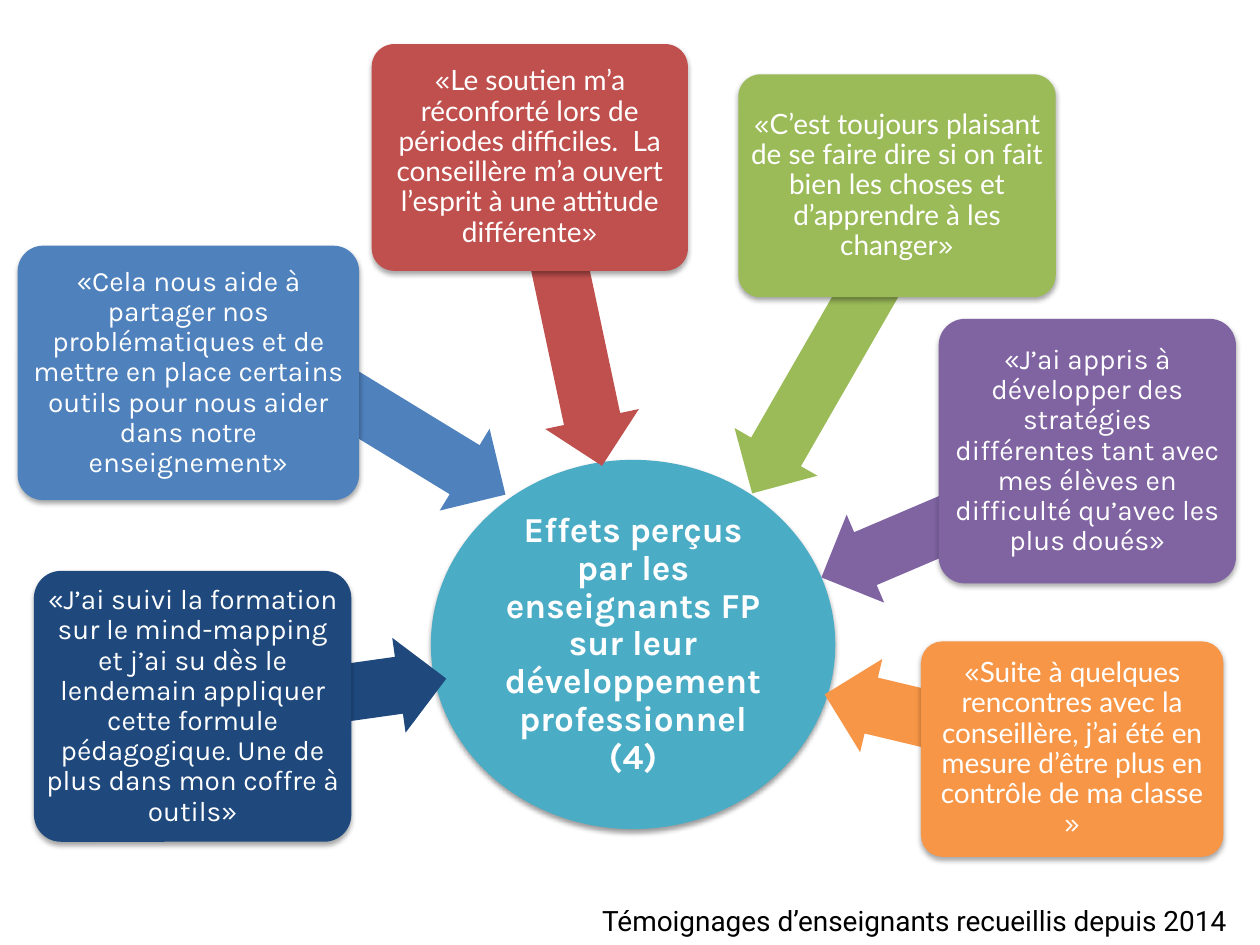
from lxml import etree
from pptx import Presentation
from pptx.dml.color import RGBColor
from pptx.enum.shapes import MSO_SHAPE as Shape
from pptx.enum.text import MSO_ANCHOR as Anchor, PP_ALIGN as Align
from pptx.oxml.ns import qn
from pptx.util import Pt

COLORS = {
    "navy": "1F497D", "blue": "4F81BD", "red": "C0504D", "green": "9BBB59",
    "purple": "8064A2", "orange": "F79646", "teal": "4BACC6",
    "white": "FFFFFF", "black": "000000",
}

ARROW_HEIGHT = 54.7

TESTIMONIES = [
    ("navy", (19.4, 326.2, 181.4, 154.8), (138.2, 368.6, 117.4), 172,
     [("Karla", "«J’ai suivi la formation sur le mind-mapping et j’ai su dès le "
       "lendemain appliquer cette formule pédagogique. Une de plus dans mon "
       "coffre à outils»")]),
    ("blue", (10.1, 140.4, 195.1, 145.4), (126, 209.5, 175.7), 211.4,
     [("Karla", "«Cela nous aide à partager nos problématiques et de mettre en "
       "place certains outils pour nous aider dans notre enseignement»")]),
    ("red", (212.4, 25.2, 180.7, 129.6), (252.7, 164.9, 151.2), 258,
     [("Karla", "«"),
      ("Lato", "Le soutien m’a réconforté lors de périodes difficiles.  La "
       "conseillère m’a ouvert l’esprit à une attitude différente"),
      ("Karla", "»")]),
    ("green", (421.9, 42.5, 181.4, 127.4), (383.8, 175, 183.6), 299.9,
     [("Karla", "«"),
      ("Lato", "C’est toujours plaisant de se faire dire si on fait bien les "
       "choses et d’apprendre à les changer"),
      ("Karla", "»")]),
    ("purple", (536.4, 182.2, 169.9, 151.2), (463, 271.4, 159.1), 336.9,
     [("Karla", "«J’ai appris à développer des stratégies différentes tant avec "
       "mes élèves en difficulté qu’avec les plus doués»")]),
    ("orange", (526.3, 366.5, 172.8, 123.1), (469.4, 385.2, 135.4), 13.4,
     [("Karla", "«"),
      ("Lato", "Suite à quelques rencontres avec la conseillère, j’ai été en "
       "mesure d’être plus en contrôle de ma classe"),
      ("Karla", " »")]),
]

prs = Presentation()
prs.slide_width, prs.slide_height = Pt(720), Pt(540)
slide = prs.slides.add_slide(prs.slide_layouts[6])


def add_block(kind, box, color, shadow_opacity=0):
    block = slide.shapes.add_shape(kind, *map(Pt, box))
    block.shadow.inherit = False
    block.fill.solid()
    block.fill.fore_color.rgb = RGBColor.from_string(COLORS[color])
    block.line.fill.background()
    if shadow_opacity:
        effects = block._element.spPr.find(qn("a:effectLst"))
        shadow = etree.SubElement(
            effects, qn("a:outerShdw"), blurRad=str(Pt(3.1)), dist=str(Pt(1.7)),
            dir="5400000", rotWithShape="0")
        tint = etree.SubElement(shadow, qn("a:srgbClr"), val=COLORS["black"])
        etree.SubElement(tint, qn("a:alpha"), val=str(shadow_opacity * 1000))
    return block


def write(block, runs, size, color, margin, align, anchor, bold=False, spacing=0.9):
    frame = block.text_frame
    frame.word_wrap = True
    frame.vertical_anchor = anchor
    frame.margin_left = frame.margin_right = Pt(margin)
    frame.margin_top = frame.margin_bottom = Pt(min(margin, 3.6))
    paragraph = frame.paragraphs[0]
    paragraph.alignment = align
    paragraph.line_spacing = spacing
    for font_name, text in runs:
        run = paragraph.add_run()
        run.text = text
        run.font.name = font_name
        run.font.size = Pt(size)
        run.font.bold = bold
        run.font.color.rgb = RGBColor.from_string(COLORS[color])


effects_circle = add_block(Shape.OVAL, (246.2, 262.8, 231.1, 211), "teal", 38)
write(effects_circle,
      [("Karla", "Effets perçus par les enseignants FP sur leur développement "
        "professionnel (4)")],
      20, "white", 1, Align.CENTER, Anchor.MIDDLE, bold=True)

for color, card_box, arrow_box, angle, quote in TESTIMONIES:
    arrow = add_block(Shape.LEFT_ARROW, (*arrow_box, ARROW_HEIGHT), color)
    arrow.adjustments[0] = 0.6
    arrow.adjustments[1] = 0.5
    arrow.rotation = angle
    card = add_block(Shape.ROUNDED_RECTANGLE, card_box, color, 35)
    card.adjustments[0] = 0.1
    write(card, quote, 16, "white", 2.4, Align.CENTER, Anchor.MIDDLE)

source_note = slide.shapes.add_textbox(Pt(337), Pt(512.6), Pt(382.3), Pt(27))
write(source_note, [("Roboto", "Témoignages d’enseignants recueillis depuis 2014")],
      16, "black", 7.2, Align.LEFT, Anchor.TOP, spacing=1.0)

prs.save("out.pptx")
